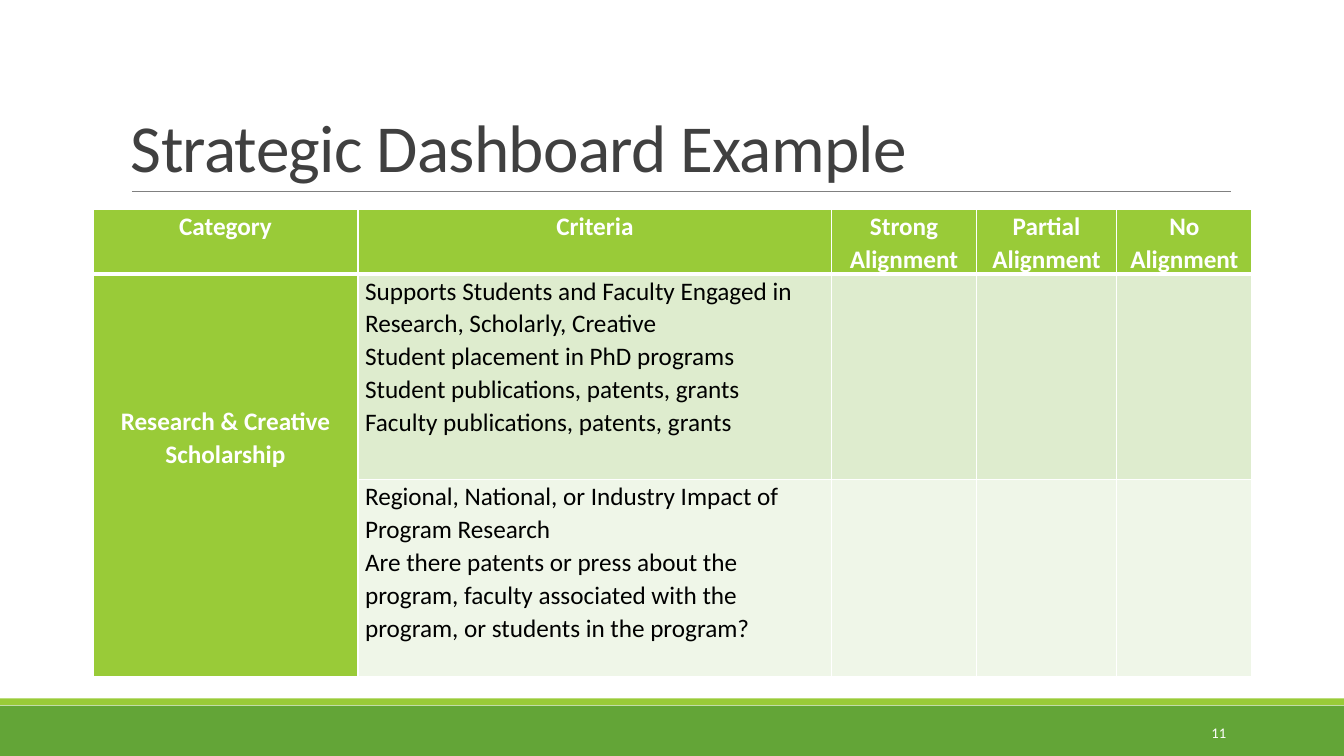
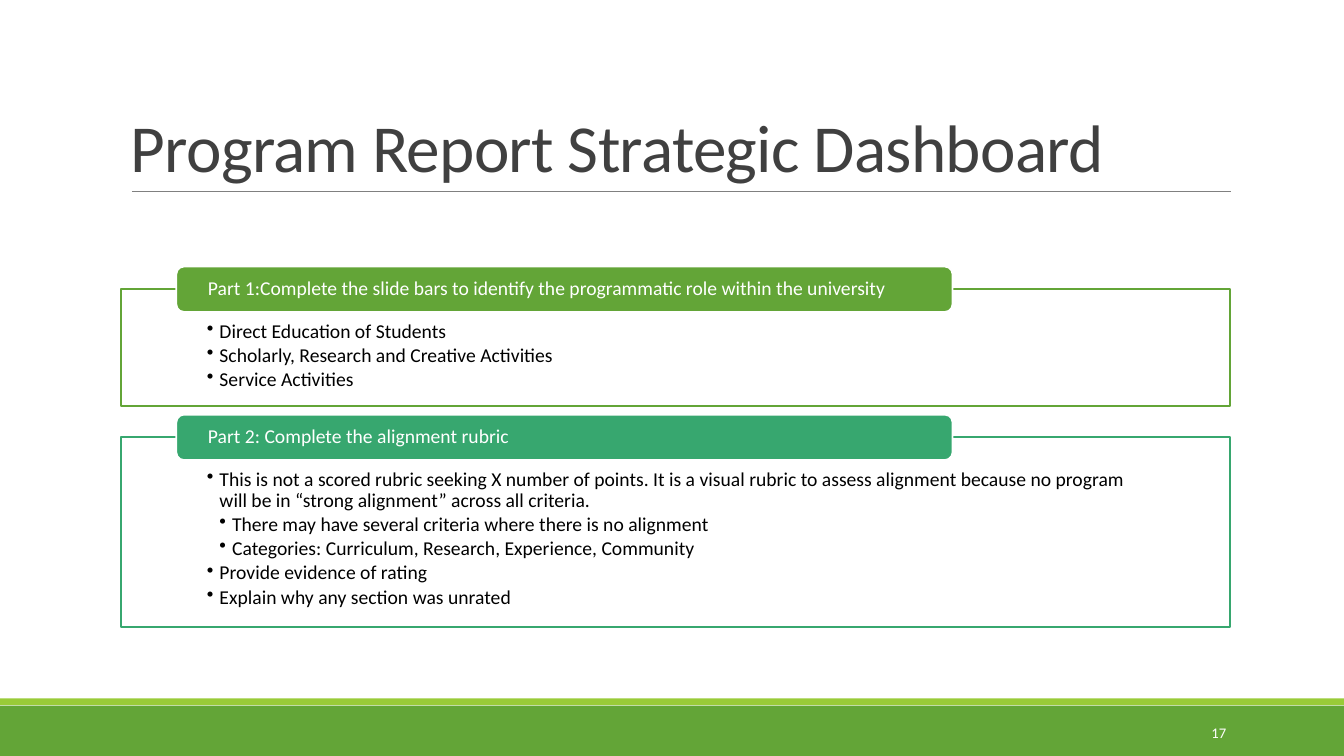
"""Build two strategic dashboard slides: a rubric table and a two-part outline."""
from dataclasses import dataclass

from lxml.etree import SubElement
from pptx import Presentation
from pptx.dml.color import RGBColor
from pptx.enum.shapes import MSO_CONNECTOR, MSO_SHAPE
from pptx.enum.text import MSO_ANCHOR as ANCHOR, PP_ALIGN as ALIGN
from pptx.oxml.ns import qn
from pptx.util import Pt

FONT = "Calibri"
WHITE, BLACK, TITLE, RULE = "FFFFFF", "000000", "404040", "808080"
GREEN, LIME, TEAL = "63A537", "99CB38", "37A76F"
ROW_FILLS = ("DEECCE", "EFF6E8")

COLUMN_WIDTHS = (189.4, 338.4, 103.2, 100.4, 96.6)
ROW_HEIGHTS = (46, 147, 140.5)
HEADERS = ("Category", "Criteria", "Strong Alignment", "Partial Alignment", "No Alignment")
CATEGORY = "Research & Creative Scholarship"
CRITERIA = (
    (
        "Supports Students and Faculty Engaged in Research, Scholarly, Creative",
        "Student placement in PhD programs",
        "Student publications, patents, grants",
        "Faculty publications, patents, grants",
    ),
    (
        "Regional, National, or Industry Impact of Program Research",
        "Are there patents or press about the program, faculty associated with the program, "
        "or students in the program?",
    ),
)


@dataclass(frozen=True)
class Box:
    left: float
    top: float
    width: float
    height: float

    def lengths(self) -> tuple:
        return tuple(Pt(v) for v in (self.left, self.top, self.width, self.height))


@dataclass(frozen=True)
class Style:
    size: float
    color: str
    bold: bool = False
    align: ALIGN = ALIGN.LEFT
    spacing: float = 1.0
    after: float = 0
    tracking: int = 0


@dataclass(frozen=True)
class Bullet:
    text: str
    level: int = 1


@dataclass(frozen=True)
class Part:
    heading: str
    color: str
    height: float
    bullets: tuple[Bullet, ...]


TITLE_STYLE = Style(48, TITLE, spacing=0.85, tracking=-50)
NUMBER_STYLE = Style(10.5, WHITE, align=ALIGN.RIGHT)
HEAD_STYLE = Style(18, WHITE, bold=True, align=ALIGN.CENTER, spacing=1.07)
BODY_STYLE = Style(18, BLACK, spacing=1.07)
BULLET_STYLE = Style(14, BLACK, spacing=0.9, after=2.1)
TAB_STYLE = Style(14, WHITE, spacing=0.9)

PARTS = (
    Part(
        "Part 1:Complete the slide bars to identify the programmatic role within the university",
        GREEN,
        83.4,
        (
            Bullet("Direct Education of Students"),
            Bullet("Scholarly, Research and Creative Activities"),
            Bullet("Service Activities"),
        ),
    ),
    Part(
        "Part 2: Complete the alignment rubric",
        TEAL,
        135.6,
        (
            Bullet(
                "This is not a scored rubric seeking X number of points. It is a visual rubric to "
                "assess alignment because no program will be in “strong alignment” across all criteria."
            ),
            Bullet("There may have several criteria where there is no alignment", 2),
            Bullet("Categories: Curriculum, Research, Experience, Community", 2),
            Bullet("Provide evidence of rating"),
            Bullet("Explain why any section was unrated"),
        ),
    ),
)


def rgb(color: str) -> RGBColor:
    return RGBColor.from_string(color)


def set_margins(target, left: float, top: float, right: float, bottom: float) -> None:
    target.margin_left, target.margin_top = Pt(left), Pt(top)
    target.margin_right, target.margin_bottom = Pt(right), Pt(bottom)


def write(tf, texts: tuple[str, ...], style: Style) -> None:
    tf.word_wrap = True
    for i, text in enumerate(texts):
        p = tf.paragraphs[0] if i == 0 else tf.add_paragraph()
        p.alignment = style.align
        p.line_spacing = style.spacing
        p.space_after = Pt(style.after)
        r = p.add_run()
        r.text = text
        r.font.name = FONT
        r.font.size = Pt(style.size)
        r.font.bold = style.bold
        r.font.color.rgb = rgb(style.color)
        if style.tracking:
            r.font._element.set("spc", str(style.tracking))


def add_text(s, box: Box, text: str, style: Style, anchor: ANCHOR) -> None:
    tf = s.shapes.add_textbox(*box.lengths()).text_frame
    tf.vertical_anchor = anchor
    write(tf, (text,), style)


def add_box(s, box: Box, fill: str, line: str | None = None, kind=MSO_SHAPE.RECTANGLE):
    sp = s.shapes.add_shape(kind, *box.lengths())
    sp.shadow.inherit = False
    sp.fill.solid()
    sp.fill.fore_color.rgb = rgb(fill)
    if line:
        sp.line.color.rgb = rgb(line)
        sp.line.width = Pt(1.25)
    else:
        sp.line.fill.background()
    return sp


def add_base(prs, title: str, number: str):
    s = prs.slides.add_slide(prs.slide_layouts[6])
    add_box(s, Box(0, 504, 960, 36), GREEN)
    add_box(s, Box(0, 498.8, 960, 4.8), LIME)
    rule = s.shapes.add_connector(MSO_CONNECTOR.STRAIGHT, Pt(94.3), Pt(136.8), Pt(879), Pt(136.8))
    rule.line.color.rgb = rgb(RULE)
    rule.line.width = Pt(0.5)
    SubElement(rule._element.spPr, qn("a:effectLst"))
    add_text(s, Box(86.4, 22.5, 792, 114.2), title, TITLE_STYLE, ANCHOR.BOTTOM)
    add_text(s, Box(780, 508.6, 103, 28.8), number, NUMBER_STYLE, ANCHOR.MIDDLE)
    return s


def set_borders(cell, top: float, bottom: float) -> None:
    tc_pr = cell._tc.get_or_add_tcPr()
    sides = (("a:lnL", 1), ("a:lnR", 1), ("a:lnT", top), ("a:lnB", bottom))
    for i, (tag, width) in enumerate(sides):
        ln = SubElement(tc_pr, qn(tag), w=str(Pt(width)))
        fill = SubElement(ln, qn("a:solidFill"))
        SubElement(fill, qn("a:srgbClr"), val=WHITE)
        tc_pr.insert(i, ln)


def add_rubric(s) -> None:
    box = Box(66.4, 149.4, sum(COLUMN_WIDTHS), sum(ROW_HEIGHTS))
    table = s.shapes.add_table(len(ROW_HEIGHTS), len(COLUMN_WIDTHS), *box.lengths()).table
    table.first_row = table.horz_banding = False
    for column, width in zip(table.columns, COLUMN_WIDTHS):
        column.width = Pt(width)
    for i, (row, height) in enumerate(zip(table.rows, ROW_HEIGHTS)):
        row.height = Pt(height)
        for j, cell in enumerate(row.cells):
            set_margins(cell, 5, 0, 5, 0)
            cell.fill.solid()
            cell.fill.fore_color.rgb = rgb(LIME if i == 0 or j == 0 else ROW_FILLS[i - 1])
            set_borders(cell, top=3 if i == 1 else 1, bottom=3 if i == 0 else 1)
    for j, header in enumerate(HEADERS):
        write(table.cell(0, j).text_frame, (header,), HEAD_STYLE)
    for i, criteria in enumerate(CRITERIA, 1):
        write(table.cell(i, 1).text_frame, criteria, BODY_STYLE)
    category = table.cell(1, 0)
    category.merge(table.cell(2, 0))
    category.margin_top = Pt(93)
    write(category.text_frame, (CATEGORY,), HEAD_STYLE)


def add_bullets(tf, bullets: tuple[Bullet, ...]) -> None:
    write(tf, tuple(b.text for b in bullets), BULLET_STYLE)
    for p, bullet in zip(tf.paragraphs, bullets):
        p.level = bullet.level
        p_pr = p._p.get_or_add_pPr()
        p_pr.set("marL", str(Pt(9 * bullet.level)))
        p_pr.set("indent", str(-Pt(9)))
        SubElement(p_pr, qn("a:buChar"), char="•")


def add_parts(s, top: float = 206.6, gap: float = 22.4, tab_height: float = 32.4) -> None:
    for part in PARTS:
        frame = add_box(s, Box(86.4, top, 792, part.height), WHITE, part.color)
        tf = frame.text_frame
        tf.vertical_anchor = ANCHOR.TOP
        set_margins(tf, 61.4, 22.9, 61.4, 8)
        add_bullets(tf, part.bullets)
        tab_box = Box(126, top - tab_height / 2, 554.4, tab_height)
        tab = add_box(s, tab_box, part.color, WHITE, MSO_SHAPE.ROUNDED_RECTANGLE)
        tf = tab.text_frame
        tf.vertical_anchor = ANCHOR.MIDDLE
        set_margins(tf, 21, 0, 21, 0)
        write(tf, (part.heading,), TAB_STYLE)
        top += part.height + gap


def main() -> None:
    prs = Presentation()
    prs.slide_width, prs.slide_height = Pt(960), Pt(540)
    add_rubric(add_base(prs, "Strategic Dashboard Example", "11"))
    add_parts(add_base(prs, "Program Report Strategic Dashboard", "17"))
    prs.save("out.pptx")


if __name__ == "__main__":
    main()
